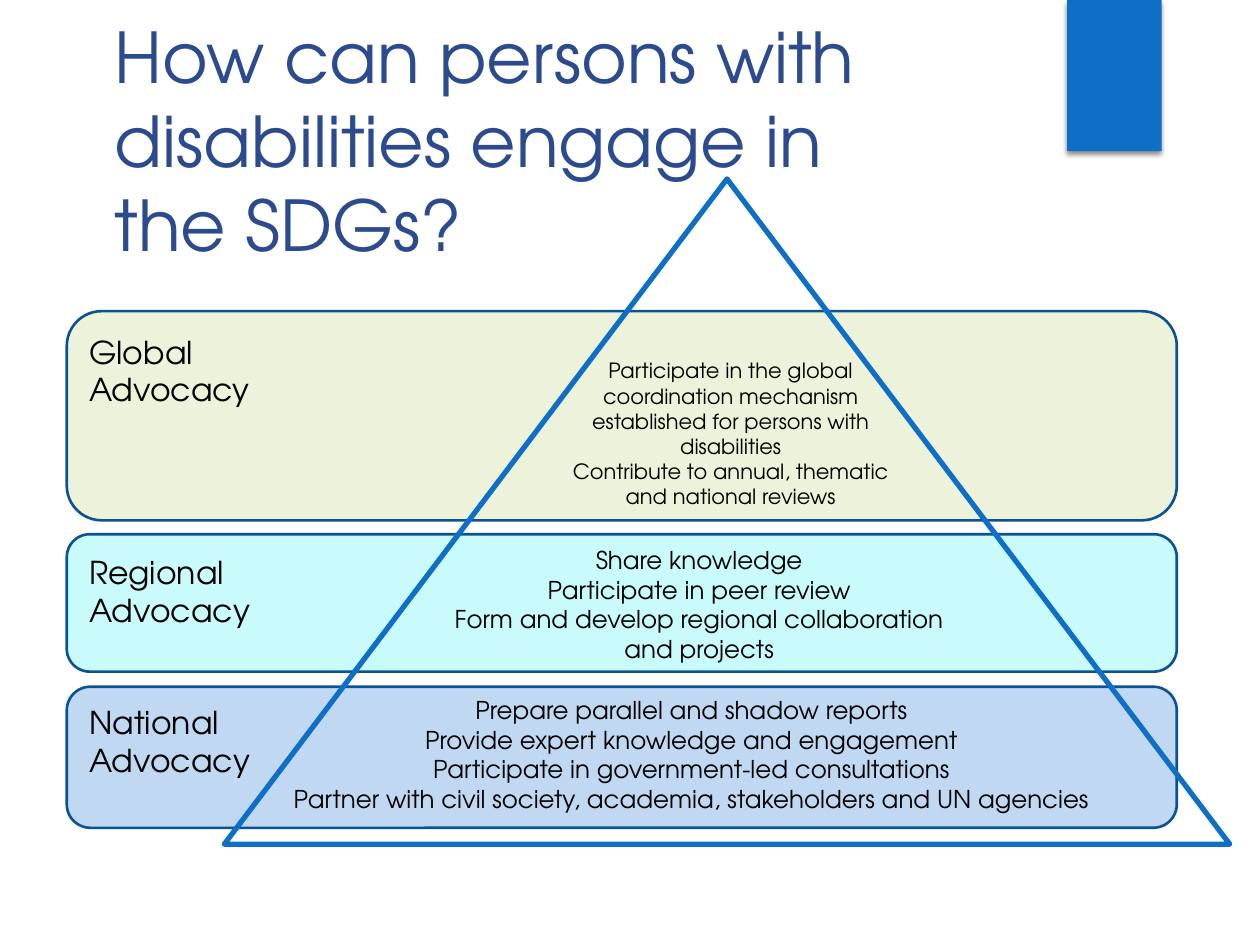
"""Build the slide on advocacy levels for engaging in the SDGs."""
from lxml import etree
from pptx import Presentation
from pptx import util as u
from pptx.dml.color import RGBColor
from pptx.enum import shapes, text
from pptx.oxml.ns import qn

SCALE = 9144
FONT = "TeX Gyre Adventor"
BLACK = RGBColor(0x00, 0x00, 0x00)
TITLE_BLUE = RGBColor(0x2C, 0x4A, 0x8E)
ACCENT = RGBColor(0x0F, 0x6F, 0xC6)
BORDER = RGBColor(0x0B, 0x52, 0x92)
OLIVE = RGBColor(0xED, 0xF3, 0xDB)
CYAN = RGBColor(0xC9, 0xFA, 0xFC)
BLUE = RGBColor(0xC1, 0xD8, 0xF2)
LEFT, CENTER = text.PP_ALIGN.LEFT, text.PP_ALIGN.CENTER
TOP, MIDDLE = text.MSO_ANCHOR.TOP, text.MSO_ANCHOR.MIDDLE
GROW, FIXED = text.MSO_AUTO_SIZE.SHAPE_TO_FIT_TEXT, text.MSO_AUTO_SIZE.NONE

BANDS = [(545, 112, BLUE), (424, 109, CYAN), (247, 166, OLIVE)]
LABELS = [
    ("Global Advocacy", (61, 259, 167, 71)),
    ("Regional Advocacy", (61, 434, 211, 71)),
    ("National Advocacy", (61, 553, 155, 71)),
]
ACTIONS = [
    ((345, 428, 420, 104), [
        "Share knowledge",
        "Participate in peer review",
        "Form and develop regional collaboration and projects",
    ]),
    ((216, 547, 666, 104), [
        "Prepare parallel and shadow reports",
        "Provide expert knowledge and engagement",
        "Participate in government-led consultations",
        "Partner with civil society, academia, stakeholders and UN agencies",
    ]),
]
GLOBAL_ACTIONS = [
    "Participate in the global coordination mechanism established for persons with disabilities",
    "Contribute to annual, thematic and national reviews",
]


def px(*lengths):
    """Turn px lengths into EMU."""
    return [u.Emu(length * SCALE) for length in lengths]


def apply(target, values):
    """Set each attribute of target from a dict."""
    for name, value in values.items():
        setattr(target, name, value)


def write(shape, lines, size, color=BLACK, align=LEFT, **frame_format):
    """Write one paragraph per line in a shape."""
    frame = shape.text_frame
    apply(frame, {"word_wrap": True, "vertical_anchor": TOP, **frame_format})
    frame.text = "\n".join(lines)
    for paragraph in frame.paragraphs:
        paragraph.alignment = align
        apply(paragraph.font, {"name": FONT, "size": u.Pt(size), "bold": False})
        paragraph.font.color.rgb = color


def add_shape(slide, kind, box, fill=None, line=None, width=1.5):
    """Add a preset shape with optional fill and line."""
    shape = slide.shapes.add_shape(kind, *px(*box))
    shape.shadow.inherit = False
    if fill is None:
        shape.fill.background()
    else:
        shape.fill.solid()
        shape.fill.fore_color.rgb = fill
    if line is None:
        shape.line.fill.background()
    else:
        shape.line.color.rgb = line
        shape.line.width = u.Pt(width)
    return shape


def add_text(slide, box, lines, size, align=LEFT):
    """Add a text box that grows with its text."""
    shape = slide.shapes.add_textbox(*px(*box))
    write(shape, lines, size, align=align, auto_size=GROW)


def add_shadow(shape):
    """Give a shape a soft shadow below it."""
    effects = shape.element.spPr.find(qn("a:effectLst"))
    shadow = etree.SubElement(effects, qn("a:outerShdw"), blurRad=str(u.Pt(3)),
                              dist=str(u.Pt(2)), dir="5400000", rotWithShape="0")
    color = etree.SubElement(shadow, qn("a:srgbClr"), val=str(BLACK))
    etree.SubElement(color, qn("a:alpha"), val="45000")


def place_title(slide, box, words):
    """Move the title placeholder to the front and format it."""
    title = slide.shapes.title
    apply(title, dict(zip(("left", "top", "width", "height"), px(*box))))
    write(title, [words], 40, TITLE_BLUE, auto_size=FIXED)
    title.element.getparent().append(title.element)


def main():
    """Build and save the slide."""
    presentation = Presentation()
    presentation.slide_width, presentation.slide_height = px(1000, 750)
    slide = presentation.slides.add_slide(presentation.slide_layouts[5])
    preset = shapes.MSO_SHAPE

    add_shadow(add_shape(slide, preset.RECTANGLE, (847, 0, 75, 120), ACCENT))
    for top, height, fill in BANDS:
        add_shape(slide, preset.ROUNDED_RECTANGLE, (53, top, 881, height), fill, BORDER)
    for label, box in LABELS:
        add_text(slide, box, [label], 18)
    for box, lines in ACTIONS:
        add_text(slide, box, lines, 14, CENTER)

    pyramid = add_shape(slide, preset.ISOSCELES_TRIANGLE, (178, 142, 798, 528), line=ACCENT, width=3)
    pyramid.adjustments[0] = 0.5
    tier = add_shape(slide, preset.TRAPEZOID, (362, 253, 436, 155))
    tier.adjustments[0] = 0.74
    write(tier, GLOBAL_ACTIONS, 12, align=CENTER, vertical_anchor=MIDDLE)

    place_title(slide, (81, 6, 615, 153), "How can persons with disabilities engage in the SDGs?")
    presentation.save("out.pptx")


if __name__ == "__main__":
    main()
